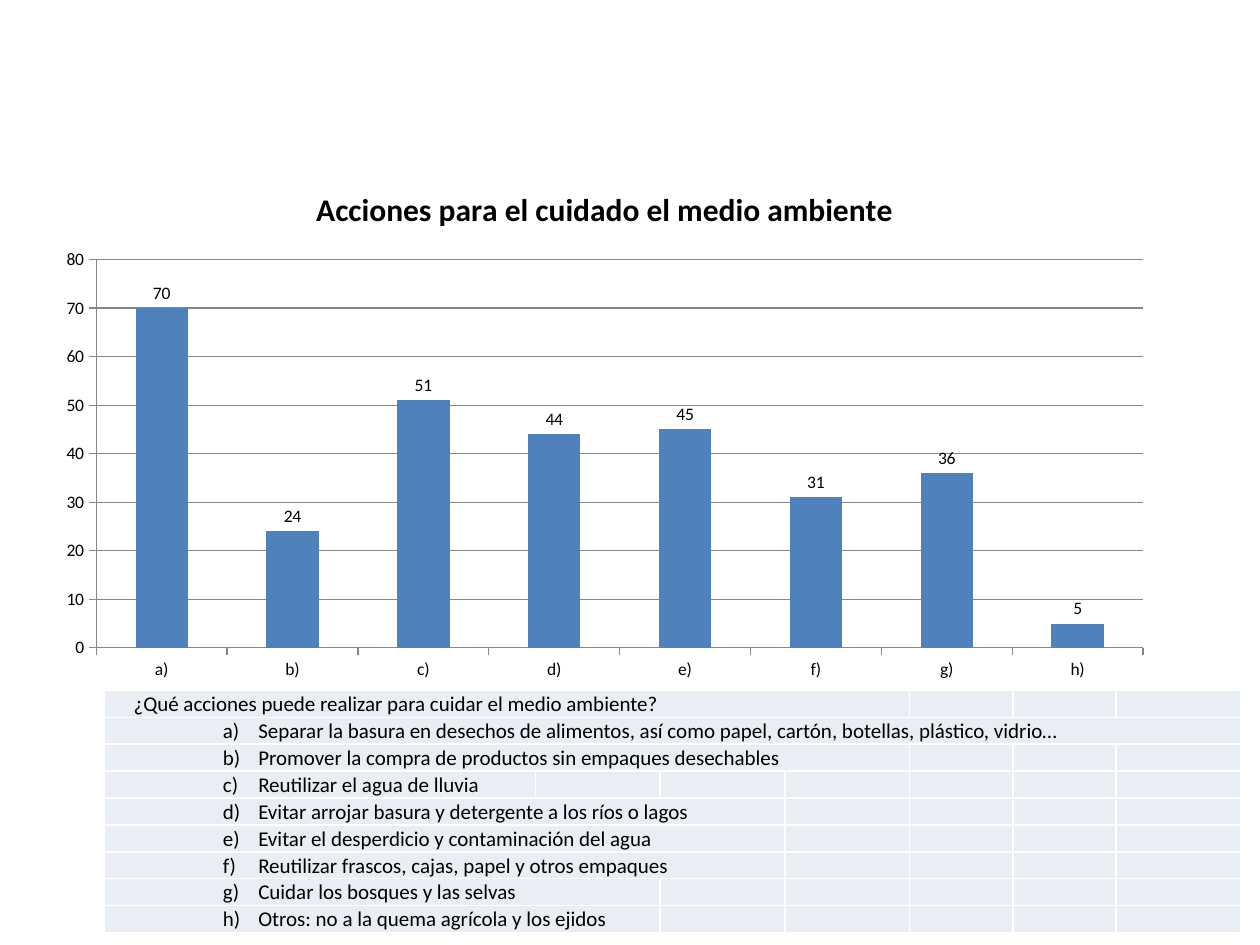
from lxml import etree
from pptx import Presentation, util as u
from pptx.chart.data import CategoryChartData
from pptx.dml.color import RGBColor
from pptx.enum import chart as ch, text
from pptx.oxml.ns import qn

FONT = "Calibri"
BLACK = RGBColor(0, 0, 0)
BAR_BLUE = RGBColor(0x4F, 0x81, 0xBD)
AXIS_GRAY = RGBColor(0x86, 0x86, 0x86)
CELL_TINT = RGBColor(0xE9, 0xED, 0xF4)
BORDER_WHITE = "FFFFFF"

TITLE = "Acciones para el cuidado el medio ambiente"
QUESTION = "¿Qué acciones puede realizar para cuidar el medio ambiente?"
QUESTION_SPAN = 4
ACTIONS = [
    ("a)", 70, 7, "Separar la basura en desechos de alimentos, así como papel, cartón, botellas, plástico, vidrio…"),
    ("b)", 24, 4, "Promover la compra de productos sin empaques desechables"),
    ("c)", 51, 1, "Reutilizar el agua de lluvia"),
    ("d)", 44, 3, "Evitar arrojar basura y detergente a los ríos o lagos"),
    ("e)", 45, 3, "Evitar el desperdicio y contaminación del agua"),
    ("f)", 31, 3, "Reutilizar frascos, cajas, papel y otros empaques"),
    ("g)", 36, 2, "Cuidar los bosques y las selvas"),
    ("h)", 5, 2, "Otros: no a la quema agrícola y los ejidos"),
]
COLUMN_WIDTHS = [3.42, 0.99, 0.99, 0.98, 0.82, 0.82, 0.98]
ROW_HEIGHT = 0.21
HANGING = u.Inches(0.28)


def style_font(font, size, bold=False):
    font.name, font.size, font.bold = FONT, u.Pt(size), bold
    font.color.rgb = BLACK


def style_cell(cell):
    cell.margin_left = cell.margin_right = u.Inches(0.01)
    cell.margin_top, cell.margin_bottom = u.Inches(0.01), 0
    cell.vertical_anchor = text.MSO_ANCHOR.MIDDLE
    properties = cell._tc.get_or_add_tcPr()
    for side in ("lnL", "lnR", "lnT", "lnB"):
        border = etree.SubElement(properties, qn(f"a:{side}"), w=str(u.Pt(1)))
        paint = etree.SubElement(border, qn("a:solidFill"))
        etree.SubElement(paint, qn("a:srgbClr"), val=BORDER_WHITE)
    cell.fill.solid()
    cell.fill.fore_color.rgb = CELL_TINT
    etree.SubElement(cell.text_frame.paragraphs[0]._p, qn("a:endParaRPr"), sz="1200")


def write_cell(cell, words, inset, hanging=0):
    cell.margin_left = u.Inches(inset)
    paragraph = cell.text_frame.paragraphs[0]
    if hanging:
        indents = paragraph._p.get_or_add_pPr()
        indents.set("marL", str(hanging))
        indents.set("indent", str(-hanging))
    paragraph.text = words
    for run in paragraph.runs:
        style_font(run.font, 12)


def add_actions_table(slide):
    rows = [(QUESTION, QUESTION_SPAN, 0.23, 0)]
    rows += [(f"{letter}\t{action}", span, 0.94, HANGING) for letter, _, span, action in ACTIONS]
    table = slide.shapes.add_table(
        len(rows), len(COLUMN_WIDTHS), u.Inches(0.83), u.Inches(5.48),
        u.Inches(sum(COLUMN_WIDTHS)), u.Inches(ROW_HEIGHT * len(rows))).table
    table.first_row = table.horz_banding = False
    for column, width in zip(table.columns, COLUMN_WIDTHS):
        column.width = u.Inches(width)
    for row in table.rows:
        row.height = u.Inches(ROW_HEIGHT)
        for cell in row.cells:
            style_cell(cell)
    for index, (words, span, inset, hanging) in enumerate(rows):
        first = table.cell(index, 0)
        if span > 1:
            first.merge(table.cell(index, span - 1))
        write_cell(first, words, inset, hanging)


def add_actions_chart(slide):
    answers = CategoryChartData()
    answers.categories = [letter for letter, *_ in ACTIONS]
    answers.add_series("Series 1", [count for _, count, *_ in ACTIONS])
    chart = slide.shapes.add_chart(
        ch.XL_CHART_TYPE.COLUMN_CLUSTERED, u.Inches(0.35), u.Inches(1.31),
        u.Inches(8.9), u.Inches(4.17), answers).chart
    style_font(chart.font, 10)
    chart.has_legend = False
    chart.has_title = True
    chart.chart_title.text_frame.text = TITLE
    style_font(chart.chart_title.text_frame.paragraphs[0].runs[0].font, 18, True)

    plot = chart.plots[0]
    plot.vary_by_categories = False
    plot.gap_width = 150
    bars = plot.series[0]
    bars.format.fill.solid()
    bars.format.fill.fore_color.rgb = BAR_BLUE
    labels = bars.data_labels
    labels.show_value = True
    labels.position = ch.XL_LABEL_POSITION.OUTSIDE_END
    style_font(labels.font, 10)

    counts = chart.value_axis
    counts.minimum_scale, counts.maximum_scale, counts.major_unit = 0, 80, 10
    counts.has_major_gridlines = True
    for axis in (chart.category_axis, counts):
        axis.major_tick_mark = ch.XL_TICK_MARK.OUTSIDE
    for line in (chart.category_axis.format.line, counts.format.line,
                 counts.major_gridlines.format.line):
        line.color.rgb = AXIS_GRAY
        line.width = u.Pt(0.75)


def main():
    deck = Presentation()
    deck.slide_width, deck.slide_height = u.Inches(10), u.Inches(7.5)
    slide = deck.slides.add_slide(deck.slide_layouts[6])
    add_actions_table(slide)
    add_actions_chart(slide)
    deck.save("out.pptx")


if __name__ == "__main__":
    main()
